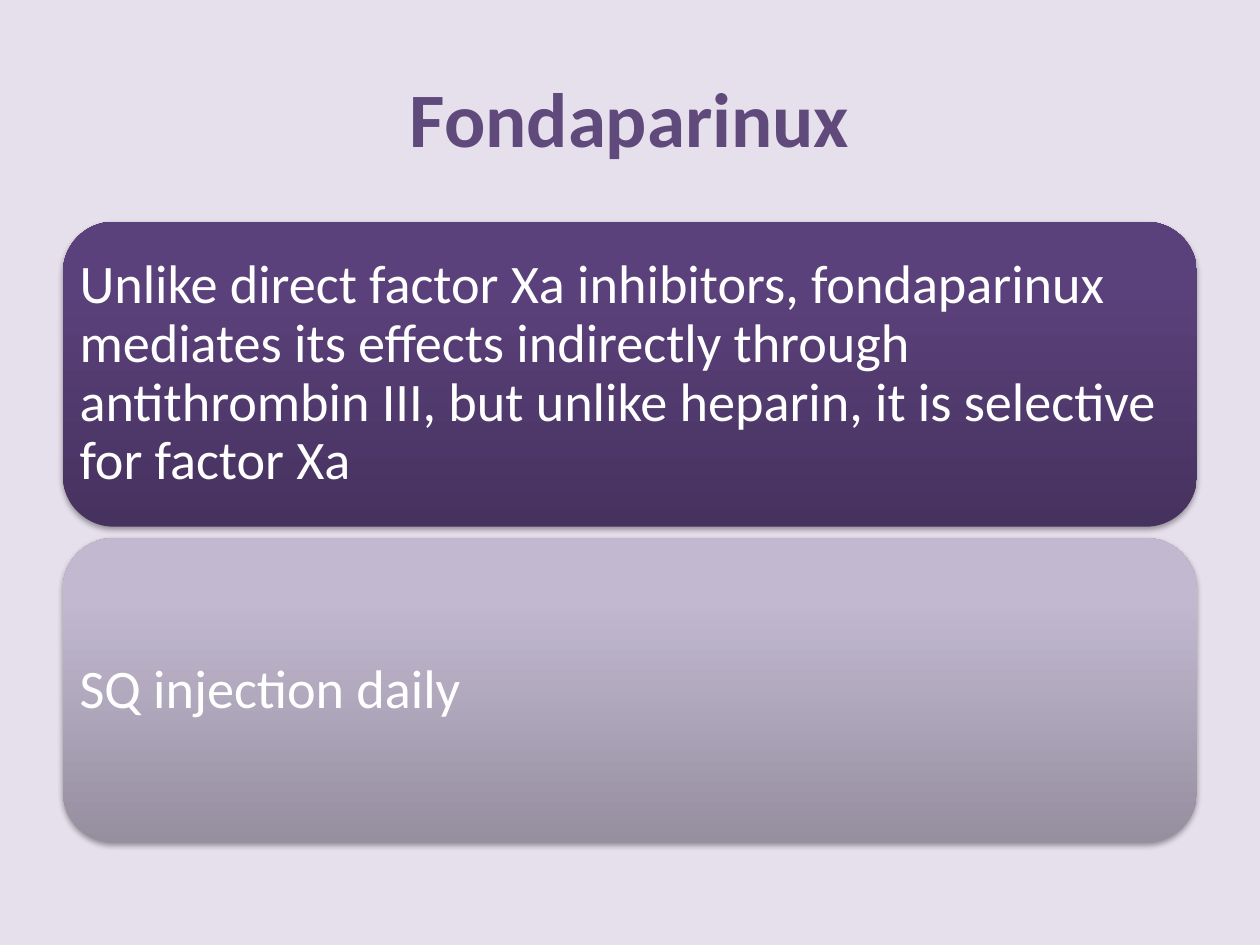
from copy import deepcopy

from lxml import etree
from pptx import Presentation
from pptx.dml.color import RGBColor
from pptx.enum.shapes import MSO_SHAPE
from pptx.enum.text import MSO_ANCHOR, PP_ALIGN
from pptx.oxml import parse_xml
from pptx.oxml.ns import nsdecls, qn
from pptx.util import Pt

ROUND = MSO_SHAPE.ROUNDED_RECTANGLE
MIDDLE = MSO_ANCHOR.MIDDLE
LEFT, CENTER = PP_ALIGN.LEFT, PP_ALIGN.CENTER
FONT = "Calibri"
COLORS = {"back": "E6E0EC", "title": "604A7B", "text": "FFFFFF", "shadow": "000000"}
STOPS = (0, 0.8, 1)
CARDS = [
    ("Unlike direct factor Xa inhibitors, fondaparinux mediates its effects "
     "indirectly through antithrombin III, but unlike heparin, it is selective "
     "for factor Xa", ("46325F", "5B417B", "5B407C")),
    ("SQ injection daily", ("968FA0", "C2B9D0", "C3BAD1")),
]


def add_run(para, text, size, color, bold=False):
    run = para.add_run()
    run.text = text
    font = run.font
    font.name, font.size, font.bold = FONT, Pt(size), bold
    font.color.rgb = RGBColor.from_string(color)


def set_title(slide, text, left, top, width, height):
    title = slide.shapes.title
    title.left, title.top = Pt(left), Pt(top)
    title.width, title.height = Pt(width), Pt(height)
    frame = title.text_frame
    frame.vertical_anchor = MIDDLE
    para = frame.paragraphs[0]
    para.alignment = CENTER
    add_run(para, text, 44, COLORS["title"], True)


def fill_fade(shape, shades):
    """Fill from bottom to top with one shade per entry in STOPS."""
    fill = shape.fill
    fill.gradient()
    fill.gradient_angle = 90
    stops = shape._element.spPr.find(".//" + qn("a:gsLst"))
    stops.append(deepcopy(stops[-1]))
    for stop, place, shade in zip(fill.gradient_stops, STOPS, shades):
        stop.position = place
        stop.color.rgb = RGBColor.from_string(shade)


def add_shadow(shape):
    """Cast a soft shadow straight down."""
    shape.shadow.inherit = False
    effects = shape._element.spPr.find(qn("a:effectLst"))
    effects.append(parse_xml(
        f'<a:outerShdw {nsdecls("a")} blurRad="{Pt(3.1)}" dist="{Pt(1.8)}" '
        f'dir="5400000" rotWithShape="0"><a:srgbClr val="{COLORS["shadow"]}">'
        '<a:alpha val="35000"/></a:srgbClr></a:outerShdw>'))


def add_card(slide, text, shades, left, top, width, height):
    card = slide.shapes.add_shape(ROUND, Pt(left), Pt(top), Pt(width), Pt(height))
    fill_fade(card, shades)
    card.line.fill.background()
    add_shadow(card)
    frame = card.text_frame
    frame.word_wrap = True
    frame.vertical_anchor = MIDDLE
    frame.margin_left = frame.margin_right = Pt(1)
    frame.margin_top = frame.margin_bottom = Pt(1)
    para = frame.paragraphs[0]
    para.alignment = LEFT
    para.line_spacing = 0.9
    add_run(para, text, 31, COLORS["text"])


def add_stack(slide, cards, left, top, width, height, gap=6.5):
    """Split the box into equal cards, one below the other."""
    tall = (height - gap * (len(cards) - 1)) / len(cards)
    for i, (text, shades) in enumerate(cards):
        add_card(slide, text, shades, left, top + i * (tall + gap), width, tall)


def main():
    deck = Presentation()
    deck.slide_width, deck.slide_height = Pt(720), Pt(540)
    slide = deck.slides.add_slide(deck.slide_layouts[5])
    back = slide.background.fill
    back.solid()
    back.fore_color.rgb = RGBColor.from_string(COLORS["back"])
    set_title(slide, "Fondaparinux", 36, 21.6, 648, 90)
    add_stack(slide, CARDS, 36, 126.7, 648, 355)
    deck.save("out.pptx")


if __name__ == "__main__":
    main()
